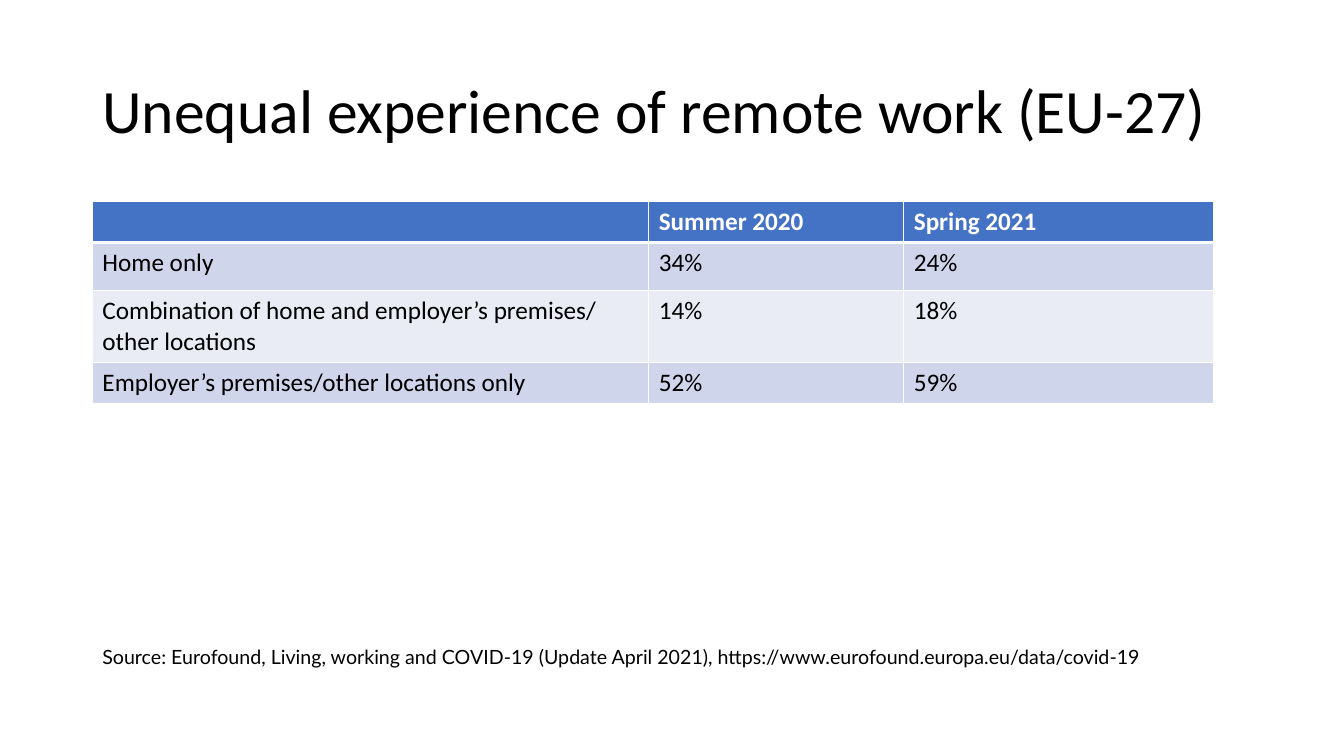
"""Build a slide with a table on the unequal experience of remote work."""
from dataclasses import dataclass

from lxml.etree import SubElement
from pptx import Presentation
from pptx.dml.color import RGBColor
from pptx.enum.text import MSO_ANCHOR, MSO_AUTO_SIZE, PP_ALIGN
from pptx.oxml.ns import qn
from pptx.slide import Slide
from pptx.table import _Cell as Cell
from pptx.text.text import TextFrame
from pptx.util import Pt

BLACK = RGBColor(0x00, 0x00, 0x00)
WHITE = RGBColor(0xFF, 0xFF, 0xFF)
BLUE = RGBColor(0x44, 0x72, 0xC4)
BAND_DARK = RGBColor(0xCF, 0xD5, 0xEA)
BAND_LIGHT = RGBColor(0xE9, 0xEB, 0xF5)

LEFT = 66
COLUMN_WIDTHS = (397.4, 182.2, 221)


@dataclass(frozen=True)
class TableRow:
    texts: tuple[str, str, str]
    height: float
    fill: RGBColor
    color: RGBColor = BLACK
    bold: bool = False
    bottom_line: float = 1


ROWS = (
    TableRow(("", "Summer 2020", "Spring 2021"), 29.2, BLUE, WHITE, True, 3),
    TableRow(("Home only", "34%", "24%"), 34.5, BAND_DARK),
    TableRow(
        ("Combination of home and employer’s premises/ other locations", "14%", "18%"),
        50.4,
        BAND_LIGHT,
    ),
    TableRow(("Employer’s premises/other locations only", "52%", "59%"), 29.2, BAND_DARK),
)


def format_text(
    frame: TextFrame, size: float, font: str, color: RGBColor, bold: bool = False
) -> None:
    for para in frame.paragraphs:
        para.alignment = PP_ALIGN.LEFT
        for span in para.runs:
            span.font.size = Pt(size)
            span.font.name = font
            span.font.bold = bold
            span.font.color.rgb = color


def add_border(cell: Cell, side: str, width: float) -> None:
    properties = cell._tc.get_or_add_tcPr()
    line = SubElement(properties, qn(f"a:ln{side}"), w=str(Pt(width)))
    fill = SubElement(line, qn("a:solidFill"))
    SubElement(fill, qn("a:srgbClr"), val=str(WHITE))


def add_title(page: Slide) -> None:
    title = page.shapes.title
    title.left, title.top, title.width, title.height = Pt(LEFT), Pt(28.8), Pt(828), Pt(104.4)
    frame = title.text_frame
    frame.text = "Unequal experience of remote work (EU-27)"
    frame.word_wrap = True
    frame.auto_size = MSO_AUTO_SIZE.NONE
    frame.vertical_anchor = MSO_ANCHOR.MIDDLE
    frame.paragraphs[0].line_spacing = 0.9
    format_text(frame, 44, "Calibri", BLACK)


def add_work_table(page: Slide) -> None:
    height = sum(row.height for row in ROWS)
    table = page.shapes.add_table(
        len(ROWS), len(COLUMN_WIDTHS), Pt(LEFT), Pt(144), Pt(sum(COLUMN_WIDTHS)), Pt(height)
    ).table
    for column, width in zip(table.columns, COLUMN_WIDTHS):
        column.width = Pt(width)
    top_line = 1
    for table_row, row in zip(table.rows, ROWS):
        table_row.height = Pt(row.height)
        for cell, text in zip(table_row.cells, row.texts):
            cell.text_frame.text = text
            format_text(cell.text_frame, 18, "Calibri", row.color, row.bold)
            for side, width in zip("LRTB", (1, 1, top_line, row.bottom_line)):
                add_border(cell, side, width)
            cell.fill.solid()
            cell.fill.fore_color.rgb = row.fill
        top_line = row.bottom_line


def add_source(page: Slide) -> None:
    box = page.shapes.add_textbox(Pt(LEFT), Pt(457.2), Pt(769.7), Pt(24.5))
    frame = box.text_frame
    frame.text = (
        "Source: Eurofound, Living, working and COVID-19 (Update April 2021), "
        "https://www.eurofound.europa.eu/data/covid-19"
    )
    frame.word_wrap = True
    frame.auto_size = MSO_AUTO_SIZE.SHAPE_TO_FIT_TEXT
    format_text(frame, 14, "Lato", BLACK)


def main() -> None:
    deck = Presentation()
    deck.slide_width, deck.slide_height = Pt(960), Pt(540)
    page = deck.slides.add_slide(deck.slide_layouts.get_by_name("Title Only"))
    add_title(page)
    add_work_table(page)
    add_source(page)
    deck.save("out.pptx")


if __name__ == "__main__":
    main()
